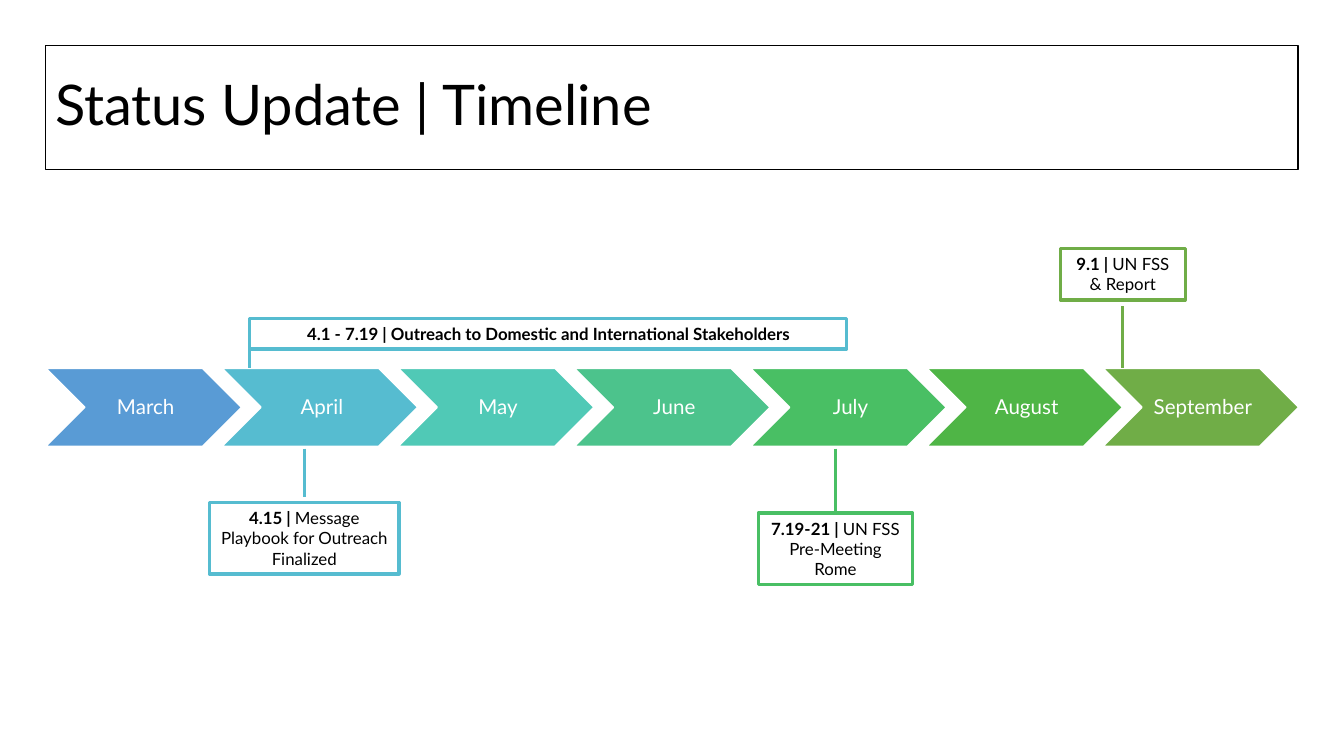
from lxml import etree
from pptx import Presentation
from pptx import util as u
from pptx.dml.color import RGBColor
from pptx.enum import shapes, text
from pptx.oxml.ns import qn


def rgb(hex_code):
    return RGBColor.from_string(hex_code)


class TimelineSlide:
    """Holds the style and the slide; lengths are in centimetres."""

    font = "Lato"
    ink = "000000"
    paper = "FFFFFF"
    accent_width = 1.75
    insets = (0.18, 0.1, 0.18, 0.1)

    def __init__(self, deck):
        title_only = deck.slide_layouts[5]
        self.slide = deck.slides.add_slide(title_only)

    def place(self, shape, box):
        shape.left, shape.top, shape.width, shape.height = map(u.Cm, box)

    def outline(self, shape, color, width):
        shape.line.color.rgb = rgb(color)
        shape.line.width = u.Pt(width)

    def frame(self, shape, insets, anchor):
        frame = shape.text_frame
        frame.word_wrap = True
        frame.vertical_anchor = anchor
        (frame.margin_left, frame.margin_top,
         frame.margin_right, frame.margin_bottom) = map(u.Cm, insets)
        return frame

    def style(self, paragraph, size, color, align, bold=False, spacing=None):
        paragraph.alignment = align
        paragraph.line_spacing = spacing
        font = paragraph.font
        font.name, font.size, font.bold = self.font, u.Pt(size), bold
        font.color.rgb = rgb(color)

    def title(self, words, box):
        heading = self.slide.shapes.title
        self.place(heading, box)
        self.outline(heading, self.ink, 0.75)
        frame = self.frame(heading, self.insets, text.MSO_ANCHOR.MIDDLE)
        frame.auto_size = text.MSO_AUTO_SIZE.NONE
        frame.text = words
        self.style(frame.paragraphs[0], 30, self.ink, text.PP_ALIGN.LEFT, spacing=0.9)

    def preset(self, kind, box):
        shape = self.slide.shapes.add_shape(kind, *map(u.Cm, box))
        shape.shadow.inherit = False
        return shape

    def month(self, name, color, box):
        chevron = self.preset(shapes.MSO_SHAPE.CHEVRON, box)
        chevron.fill.solid()
        chevron.fill.fore_color.rgb = rgb(color)
        self.outline(chevron, self.paper, 1)
        frame = self.frame(chevron, (0.13, 0.05, 0.05, 0.05), text.MSO_ANCHOR.MIDDLE)
        frame.text = name
        self.style(frame.paragraphs[0], 11, self.paper, text.PP_ALIGN.CENTER, spacing=0.9)

    def event(self, date, details, color, box):
        """Outlined box: a bold date, then one paragraph per detail."""
        card = self.preset(shapes.MSO_SHAPE.RECTANGLE, box)
        card.fill.background()
        self.outline(card, color, self.accent_width)
        frame = self.frame(card, self.insets, text.MSO_ANCHOR.TOP)
        frame.auto_size = text.MSO_AUTO_SIZE.SHAPE_TO_FIT_TEXT
        frame.text = "\n".join([""] + details[1:]) if details else ""
        lead = frame.paragraphs[0]
        lead_run = lead.add_run()
        lead_run.text = date
        if details:
            lead_run.font.bold = True
            lead.add_run().text = details[0]
        for paragraph in frame.paragraphs:
            self.style(paragraph, 9, self.ink, text.PP_ALIGN.CENTER, bold=not details)

    def stem(self, x, top, bottom, color):
        line = self.slide.shapes.add_connector(
            shapes.MSO_CONNECTOR.STRAIGHT, *map(u.Cm, (x, top, x, bottom)))
        self.outline(line, color, self.accent_width)
        etree.SubElement(line.element.spPr, qn("a:effectLst"))


def main():
    deck = Presentation()
    deck.slide_width, deck.slide_height = u.Cm(25.4), u.Cm(14.29)
    timeline = TimelineSlide(deck)
    timeline.title("Status Update | Timeline", (0.86, 0.86, 23.67, 2.34))

    # Row of months
    months = {
        "March": "599BD5", "April": "56BCD0", "May": "50C9B6", "June": "4CC38C",
        "July": "49BF64", "August": "4FB546", "September": "70AD47",
    }
    left, pitch, row_top = 0.86, 3.33, 6.96
    for i, (name, color) in enumerate(months.items()):
        timeline.month(name, color, (left + i * pitch, row_top, 3.71, 1.48))

    # Events, each with a stem from the middle of its box to the row
    below = 8.48
    events = [
        ("4.15 | ", ["Message Playbook for Outreach Finalized"], "April",
         (3.96, 9.5, 3.58, 1.35), (below, 9.4)),
        ("7.19-21 | ", ["UN FSS Pre-Meeting", "Rome"], "July",
         (14.33, 9.7, 2.92, 1.35), (below, 9.65)),
        ("9.1 | ", ["UN FSS & Report"], "September",
         (20.04, 4.7, 2.36, 0.97), (5.79, row_top)),
    ]
    for date, details, month, box, (top, bottom) in events:
        timeline.stem(box[0] + box[2] / 2, top, bottom, months[month])
        timeline.event(date, details, months[month], box)

    # Outreach period, with its stem at the starting edge
    outreach = (4.72, 6.02, 11.28, 0.58)
    timeline.stem(outreach[0], 6.3, row_top, months["April"])
    timeline.event("4.1 - 7.19 | Outreach to Domestic and International Stakeholders",
                   [], months["April"], outreach)

    deck.save("out.pptx")


if __name__ == "__main__":
    main()
